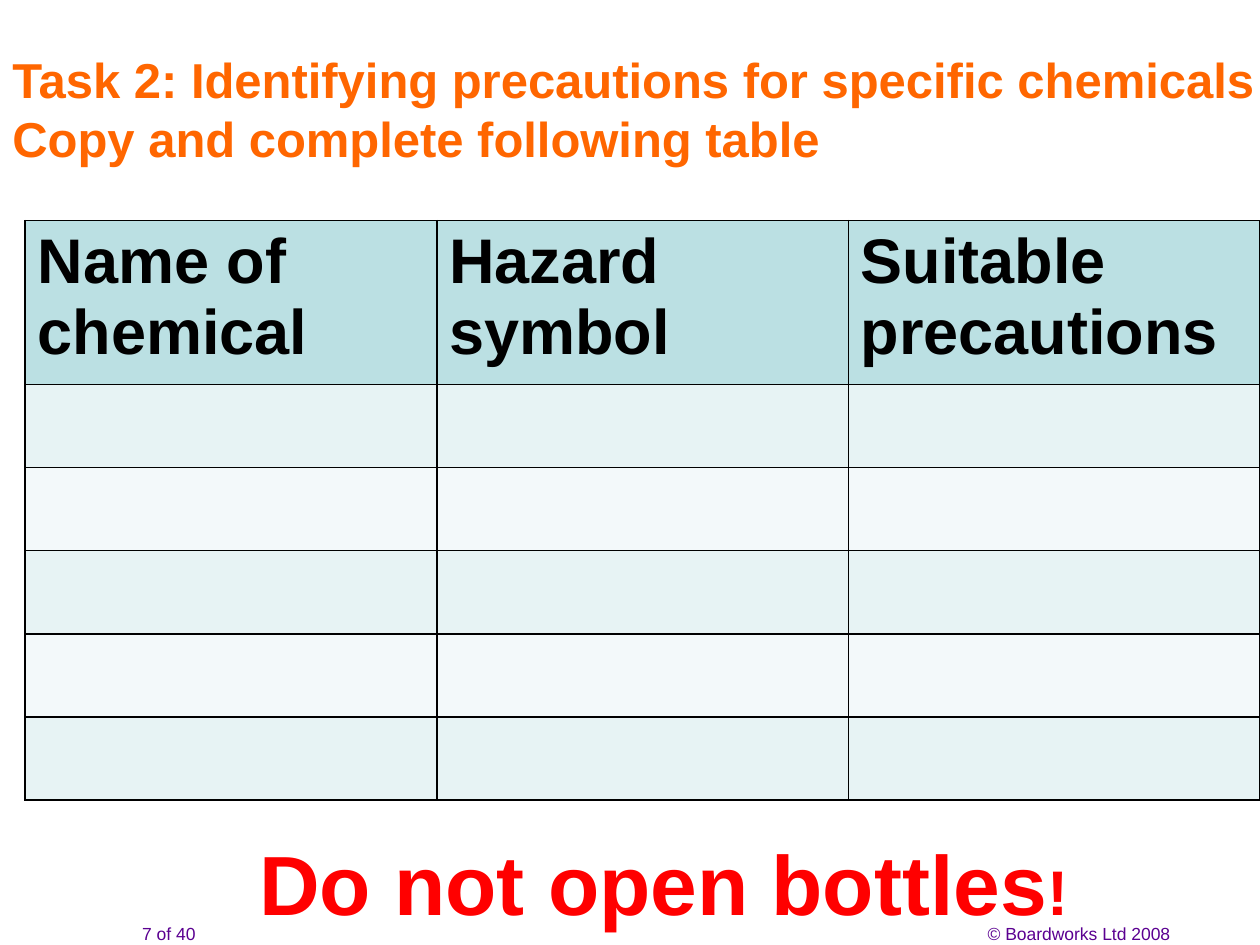
from lxml.etree import SubElement
from pptx import Presentation
from pptx.dml.color import RGBColor
from pptx.enum.text import MSO_ANCHOR, PP_ALIGN
from pptx.oxml.ns import qn
from pptx.util import Inches, Pt

# Content
TITLE = ("Task 2: Identifying precautions for specific chemicals\v"
         "Copy and complete following table")
HEADS = ["Name of chemical", "Hazard symbol", "Suitable precautions"]
BLANKS = 5
WARNING = [("Do not open bottles", "warn"), ("!", "mark")]
PAGE = "7 of 40"
RIGHTS = "© Boardworks Ltd 2008"

THEME = {
    "font": "Arial",
    "color": {"title": "FF6600", "head": "000000", "warn": "FF0000",
              "mark": "FF0000", "foot": "5B0091", "line": "000000"},
    "size": {"title": 28, "head": 36, "warn": 48, "mark": 36, "foot": 10},
    "top": "BBE0E3",
    "bands": ["E7F3F4", "F3F9FA"],
}


def style(font, role):
    font.name = THEME["font"]
    font.size = Pt(THEME["size"][role])
    font.color.rgb = RGBColor.from_string(THEME["color"][role])
    font.bold = role != "foot"


def add_text(slide, box, runs, align=PP_ALIGN.LEFT, wrap=True,
             anchor=MSO_ANCHOR.TOP):
    frame = slide.shapes.add_textbox(*map(Inches, box)).text_frame
    frame.word_wrap = wrap
    frame.vertical_anchor = anchor
    para = frame.paragraphs[0]
    para.alignment = align
    if len(runs) == 1:
        para.text, role = runs[0]
        style(para.font, role)
        return
    for text, role in runs:
        run = para.add_run()
        run.text = text
        style(run.font, role)


def paint(cell, color):
    """Draw the four borders, then fill the cell."""
    props = cell._tc.get_or_add_tcPr()
    for side in ("lnL", "lnR", "lnT", "lnB"):
        line = SubElement(props, qn("a:" + side), w=str(Pt(1)))
        fill = SubElement(line, qn("a:solidFill"))
        SubElement(fill, qn("a:srgbClr"), val=THEME["color"]["line"])
    cell.fill.solid()
    cell.fill.fore_color.rgb = RGBColor.from_string(color)


def add_grid(slide, left, top, width, tall, step):
    high = tall + BLANKS * step
    grid = slide.shapes.add_table(
        BLANKS + 1, len(HEADS), *map(Inches, (left, top, width, high))).table
    for r, row in enumerate(grid.rows):
        row.height = Inches(step if r else tall)
        color = THEME["bands"][(r - 1) % 2] if r else THEME["top"]
        for cell in row.cells:
            paint(cell, color)
    for c, head in enumerate(HEADS):
        para = grid.cell(0, c).text_frame.paragraphs[0]
        para.text = head
        style(para.font, "head")


def main():
    deck = Presentation()
    deck.slide_width, deck.slide_height = Inches(10), Inches(7.5)
    slide = deck.slides.add_slide(deck.slide_layouts[6])

    # Footer
    add_text(slide, (7.74, 7.28, 1.65, 0.27), [(RIGHTS, "foot")], wrap=False)
    add_text(slide, (0.98, 7.28, 0.72, 0.27), [(PAGE, "foot")],
             PP_ALIGN.CENTER)

    # Title, table and warning
    add_text(slide, (0, 0.56, 10.51, 0.6), [(TITLE, "title")],
             anchor=MSO_ANCHOR.MIDDLE)
    add_grid(slide, 0.2, 1.75, 9.8, tall=1.22, step=0.66)
    add_text(slide, (1.61, 6.55, 7.32, 0.91), WARNING, PP_ALIGN.CENTER)

    deck.save("out.pptx")


if __name__ == "__main__":
    main()
